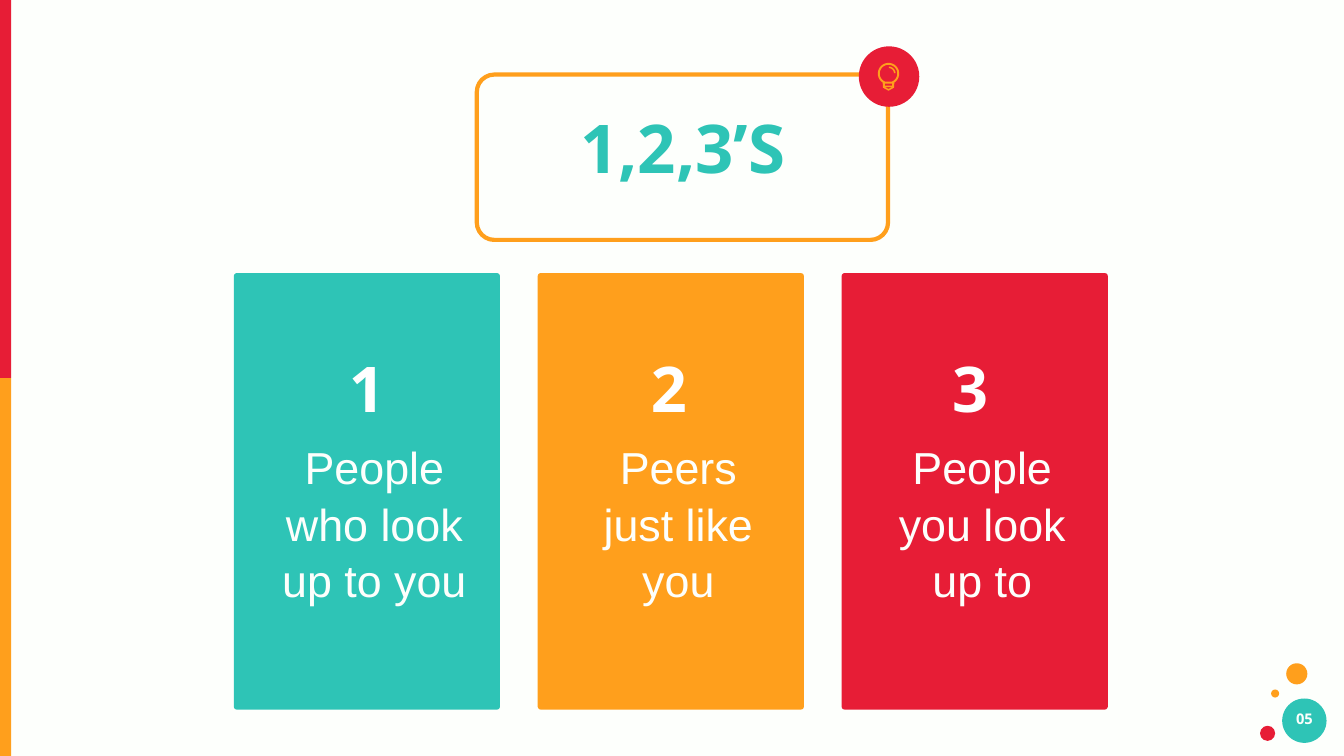
from math import cos, radians, sin

from pptx import Presentation
from pptx.dml.color import RGBColor
from pptx.enum.shapes import MSO_SHAPE
from pptx.enum.text import MSO_ANCHOR, MSO_AUTO_SIZE, PP_ALIGN
from pptx.util import Inches, Pt

COLORS = {
    "paper": "FDFFFC",
    "white": "FFFFFF",
    "teal": "2EC4B6",
    "orange": "FF9F1C",
    "red": "E71D36",
}
CELL = Inches(0.1)
COLUMNS, ROWS = 133.33, 75


def arc(center, radius, start, end, steps=32):
    """Return points along an arc, with angles in degrees running clockwise."""
    angles = [radians(start + (end - start) * step / steps) for step in range(steps + 1)]
    return [(center[0] + radius * cos(a), center[1] + radius * sin(a)) for a in angles]


class GridSlide:
    """Draw styled elements on one slide, measured in grid columns and rows."""

    FRAME = {
        "word_wrap": True,
        "auto_size": MSO_AUTO_SIZE.SHAPE_TO_FIT_TEXT,
        "vertical_anchor": MSO_ANCHOR.TOP,
    }
    SIDES = ("margin_left", "margin_right", "margin_top", "margin_bottom")

    def __init__(self, presentation):
        """Add a blank slide with the paper colour behind it."""
        self.slide = presentation.slides.add_slide(presentation.slide_layouts[6])
        self.paint(self.slide.background.fill, "paper")

    def apply(self, target, formats):
        """Set each attribute named in the formats."""
        for attribute, value in formats.items():
            setattr(target, attribute, value)

    def paint(self, fill, color):
        """Make a fill solid in a named colour, or empty."""
        if color:
            fill.solid()
            fill.fore_color.rgb = RGBColor.from_string(COLORS[color])
        else:
            fill.background()

    def finish(self, shape, fill, border=None):
        """Give a shape its fill and border, without a shadow."""
        shape.shadow.inherit = False
        self.paint(shape.fill, fill)
        self.paint(shape.line.fill, border)
        if border:
            shape.line.width = Pt(3)

    def block(self, kind, box, fill=None, border=None, corner=None):
        """Add a preset shape."""
        shape = self.slide.shapes.add_shape(kind, *(round(side * CELL) for side in box))
        if corner is not None:
            shape.adjustments[0] = corner
        self.finish(shape, fill, border)

    def outline(self, contours, fill):
        """Add a freeform made of closed contours."""
        first, *rest = [[(x * CELL, y * CELL) for x, y in contour] for contour in contours]
        builder = self.slide.shapes.build_freeform(*first[0])
        builder.add_line_segments(first[1:])
        for contour in rest:
            builder.move_to(*contour[0])
            builder.add_line_segments(contour[1:])
        self.finish(builder.convert_to_shape(), fill)

    def text(self, words, box, color, font, spacing=1.0, inset=0.0):
        """Add a centred text box."""
        frame = self.slide.shapes.add_textbox(*(round(side * CELL) for side in box)).text_frame
        self.apply(frame, self.FRAME | dict.fromkeys(self.SIDES, Inches(inset)))
        paragraph = frame.paragraphs[0]
        self.apply(paragraph, {"alignment": PP_ALIGN.CENTER, "line_spacing": spacing})
        run = paragraph.add_run()
        run.text = words
        self.apply(run.font, font)
        run.font.color.rgb = RGBColor.from_string(COLORS[color])


def main():
    """Build and save the slide."""
    presentation = Presentation()
    presentation.slide_width = round(COLUMNS * CELL)
    presentation.slide_height = ROWS * CELL
    page = GridSlide(presentation)

    number_font = {"name": "Open Sans", "size": Pt(45), "bold": True}
    group_font = {"name": "Arial", "size": Pt(32), "bold": False}
    title_font = {"name": "Noto Sans", "size": Pt(48), "bold": True}
    page_font = {"name": "Open Sans", "size": Pt(10.5), "bold": True}

    groups = [
        ("People who look up to you", "teal", 36.4),
        ("Peers just like you", "orange", 66.35),
        ("People you look up to", "red", 96.25),
    ]
    for index, (group, color, number_center) in enumerate(groups):
        left = 23.2 + index * 30.15
        page.block(MSO_SHAPE.ROUNDED_RECTANGLE, (left, 27.1, 26.4, 43.3), color, corner=0.011)
        page.text(group, (left + 3.6, 42.4, 20.7, 17.2), "paper", group_font, 1.05, 0.1)
        page.text(str(index + 1), (number_center - 8, 34.7, 16, 8.6), "white", number_font)

    for half, color in enumerate(("red", "orange")):
        page.block(MSO_SHAPE.RECTANGLE, (0, half * ROWS / 2, 1.1, ROWS / 2), color)

    page.block(MSO_SHAPE.ROUNDED_RECTANGLE, (47.3, 7.4, 40.8, 16.4), border="orange", corner=0.106)
    page.text("1,2,3’S", (49.2, 10.5, 37.1, 9.1), "teal", title_font)

    page.block(MSO_SHAPE.OVAL, (85.2, 4.6, 6, 6), "red")
    bulb = (88.15, 7.3)
    glass = arc(bulb, 1.06, 123, 417) + [(88.7, 8.7), (88.15, 9), (87.6, 8.7)]
    hollow = arc(bulb, 0.87, 114, 426)
    band = [(87.8, 8.3), (88.5, 8.3), (88.5, 8.5), (87.8, 8.5)]
    tip = [(87.8, 8.65), (88.5, 8.65), (88.15, 8.82)]
    page.outline([glass, hollow, band, tip], "orange")
    page.outline([arc(bulb, 0.7, -87, -3) + arc(bulb, 0.55, -3, -87)], "orange")

    dots = [
        (127.2, 69.3, 4.4, "teal"),
        (127.6, 65.8, 2.1, "orange"),
        (125, 72, 1.5, "red"),
        (126.1, 68.4, 0.8, "orange"),
    ]
    for left, top, size, color in dots:
        page.block(MSO_SHAPE.OVAL, (left, top, size, size), color)
    page.text("05", (126.8, 70.4, 5.2, 2), "paper", page_font)

    presentation.save("out.pptx")


if __name__ == "__main__":
    main()
